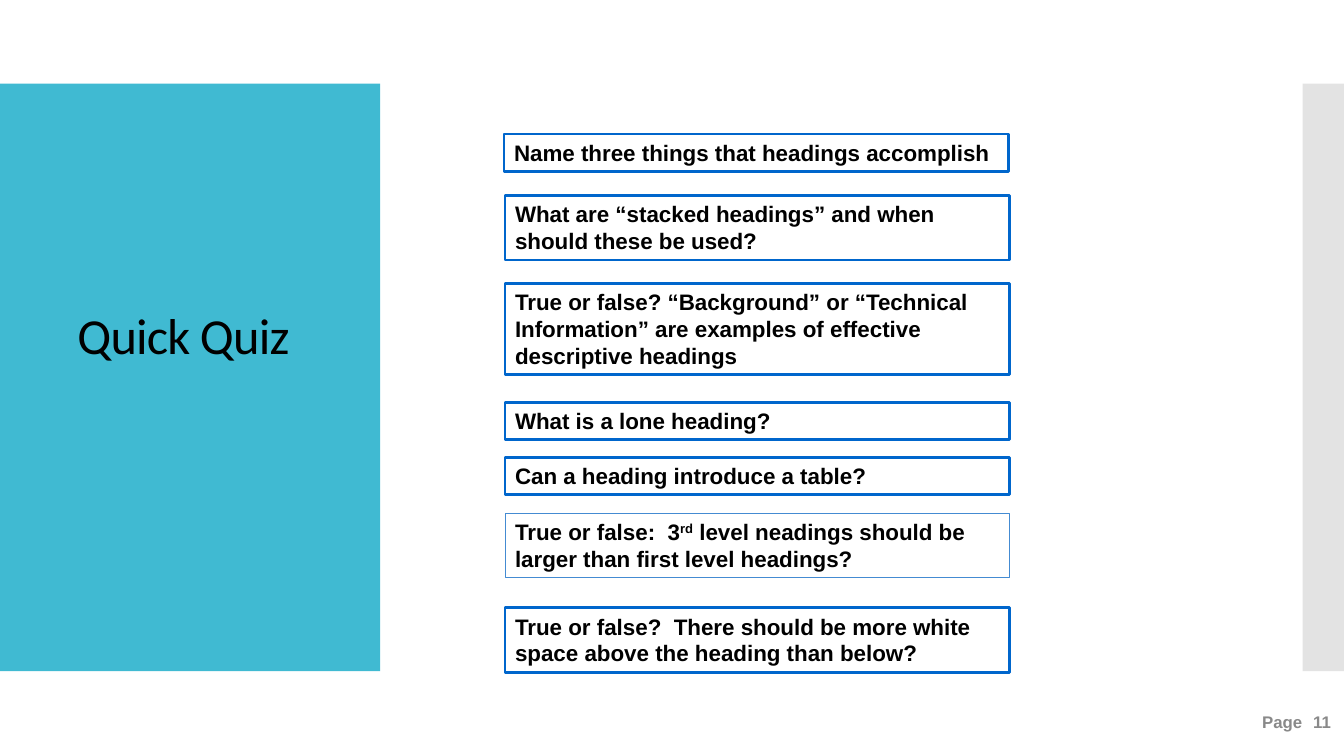
from pptx import Presentation
from pptx.dml.color import RGBColor
from pptx.enum.shapes import MSO_SHAPE as SHAPE
from pptx.enum.text import MSO_ANCHOR as ANCHOR, MSO_AUTO_SIZE as AUTO, PP_ALIGN as ALIGN
from pptx.oxml.ns import qn
from pptx.util import Pt
from lxml import etree

PX = 9144  # 100 px to the inch
COLORS = {"teal": "40BAD2", "band": "C8C8C8", "white": "FFFFFF", "black": "000000",
          "gray": "898989", "blue": "0066CC", "sky": "448BD2"}


def rgb(name):
    return RGBColor.from_string(COLORS[name])


def write(shape, runs, font="Arial", size=16, color="black", bold=True,
          align=ALIGN.LEFT, anchor=ANCHOR.TOP, auto=AUTO.NONE, line=None):
    """Each run is a text and a dict of its own rPr attributes."""
    frame = shape.text_frame
    frame.word_wrap = True
    frame.auto_size = auto
    frame.vertical_anchor = anchor
    para = frame.paragraphs[0]
    para.alignment = align
    para.line_spacing = line
    for text, extra in runs:
        run = para.add_run()
        run.text = text
        run.font.name = font
        run.font.size = Pt(size)
        run.font.bold = bold
        run.font.color.rgb = rgb(color)
        for key, value in extra.items():
            run._r.get_or_add_rPr().set(key, value)


deck = Presentation()
deck.slide_width, deck.slide_height = 1333 * PX, 750 * PX
slide = deck.slides.add_slide(deck.slide_layouts[6])
shapes = slide.shapes

# Side panels
for left, width, color in [(0, 377, "teal"), (1292, 41, "band")]:
    panel = shapes.add_shape(SHAPE.RECTANGLE, left * PX, 83 * PX, width * PX, 583 * PX)
    panel.shadow.inherit = False
    panel.fill.solid()
    panel.fill.fore_color.rgb = rgb(color)
    panel.line.fill.background()
# The right panel is half transparent
tint = panel.fill._xPr.find(qn("a:solidFill"))[0]
etree.SubElement(tint, qn("a:alpha")).set("val", "50000")

# Title
title = shapes.add_textbox(67 * PX, 282 * PX, 900 * PX, 107 * PX)
write(title, [("Quick Quiz", {"spc": "-60"})], font="Calibri", size=36,
      bold=False, anchor=ANCHOR.MIDDLE, line=0.9)

# Page number
page = shapes.add_textbox(1163 * PX, 695 * PX, 167 * PX, 40 * PX)
write(page, [("Page", {}), ("  ", {"sz": "1400"}), ("11", {})], size=12,
      color="gray", align=ALIGN.RIGHT, anchor=ANCHOR.MIDDLE)

# Questions: left, top, number of lines, runs
quiz = [
    (500, 133, 1, [("Name three things that headings accomplish", {})]),
    (501, 194, 2, [("What are “stacked headings” and when should these be used?", {})]),
    (501, 281, 3, [("True or false? “Background” or “Technical Information” "
                    "are examples of effective descriptive headings", {})]),
    (501, 399, 1, [("What is a lone heading?", {})]),
    (501, 454, 1, [("Can a heading introduce a table?", {})]),
    (501, 509, 2, [("True or false:  3", {}), ("rd", {"baseline": "30000"}),
                   (" level neadings should be larger than first level headings?", {})]),
    (501, 603, 2, [("True or false?  There should be more white space "
                    "above the heading than below?", {})]),
]
for left, top, rows, runs in quiz:
    box = shapes.add_shape(SHAPE.RECTANGLE, left * PX, top * PX,
                           500 * PX, (10 + 27 * rows) * PX)
    box.shadow.inherit = False
    if len(runs) > 1:  # the question with a superscript has a thin, open frame
        box.fill.background()
        edge, weight = "sky", 0.75
    else:
        box.fill.solid()
        box.fill.fore_color.rgb = rgb("white")
        edge, weight = "blue", 2
    box.line.color.rgb = rgb(edge)
    box.line.width = Pt(weight)
    write(box, runs, auto=AUTO.SHAPE_TO_FIT_TEXT)

deck.save("out.pptx")
